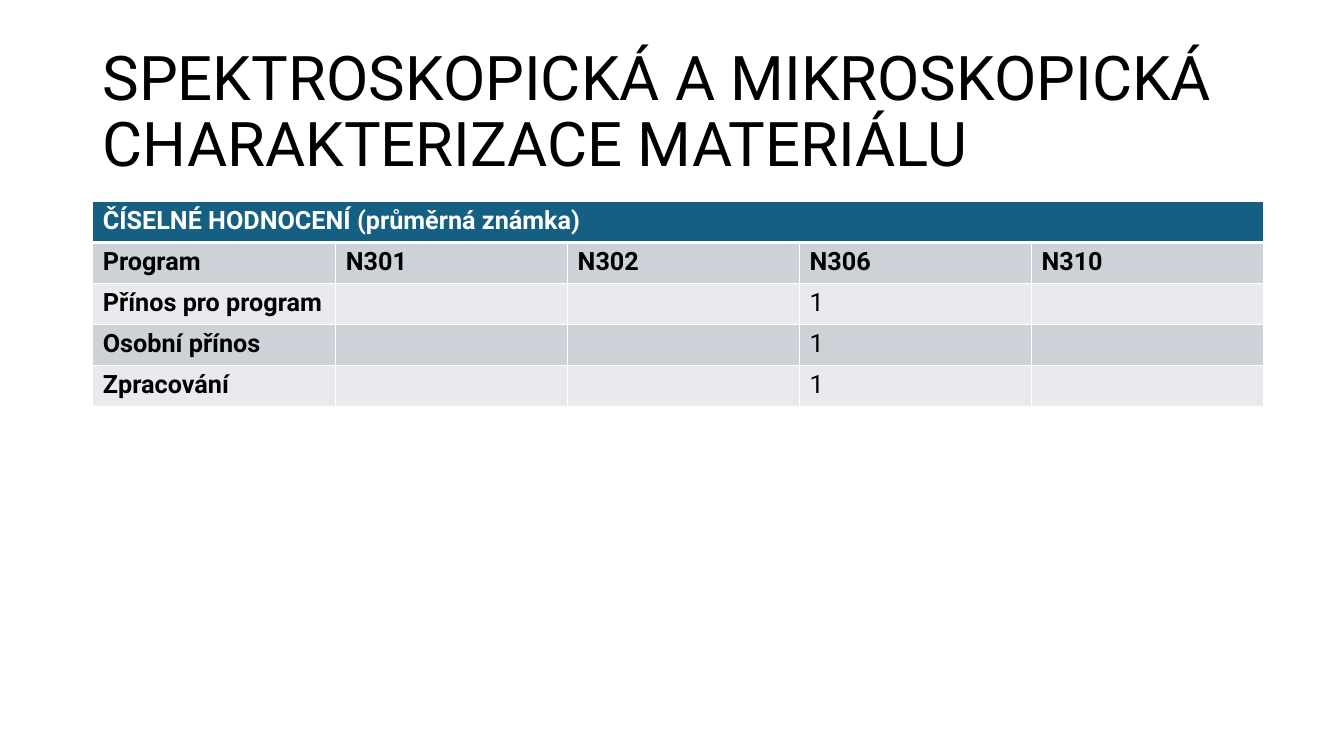
from lxml.etree import SubElement
from pptx import Presentation
from pptx.dml.color import RGBColor
from pptx.enum.text import MSO_ANCHOR
from pptx.oxml.ns import qn
from pptx.util import Inches, Pt

FONT = "Roboto"
BLACK, WHITE, HEADER_BLUE = "000000", "FFFFFF", "156082"
BANDS = ["CCD2D8", "E8EAED"]

TITLE = "SPEKTROSKOPICKÁ A MIKROSKOPICKÁ CHARAKTERIZACE MATERIÁLU"
RATINGS = [
    ["ČÍSELNÉ HODNOCENÍ (průměrná známka)", "", "", "", ""],
    ["Program", "N301", "N302", "N306", "N310"],
    ["Přínos pro program", "", "", "1", ""],
    ["Osobní přínos", "", "", "1", ""],
    ["Zpracování", "", "", "1", ""],
]


def color(hex_string):
    return RGBColor.from_string(hex_string)


def write(para, text, size, hex_string, bold=False):
    para.text = text
    para.font.name = FONT
    para.font.size = Pt(size)
    para.font.bold = bold
    para.font.color.rgb = color(hex_string)


def add_borders(cell, hex_string, bottom_width):
    properties = cell._tc.get_or_add_tcPr()
    for side, width in [("L", 1), ("R", 1), ("T", 1), ("B", bottom_width)]:
        line = SubElement(properties, qn(f"a:ln{side}"), w=str(Pt(width)))
        fill = SubElement(line, qn("a:solidFill"))
        SubElement(fill, qn("a:srgbClr"), val=hex_string)


def add_title(page, left, top, width, height):
    box = page.shapes.add_textbox(
        Inches(left), Inches(top), Inches(width), Inches(height))
    frame = box.text_frame
    frame.word_wrap = True
    frame.vertical_anchor = MSO_ANCHOR.MIDDLE
    para = frame.paragraphs[0]
    para.line_spacing = 0.9
    write(para, TITLE, 44, BLACK)


def add_ratings(page, left, top, width, height):
    row_count, column_count = len(RATINGS), len(RATINGS[0])
    table = page.shapes.add_table(
        row_count, column_count,
        Inches(left), Inches(top), Inches(width), Inches(height)).table
    table.first_row = False
    table.horz_banding = False

    # The label column is a little wider than the equal program columns
    label_width = 2.41
    program_width = (width - label_width) / (column_count - 1)
    for index, column in enumerate(table.columns):
        column.width = Inches(program_width if index else label_width)

    for r, row in enumerate(RATINGS):
        is_header = r == 0
        for c, text in enumerate(row):
            cell = table.cell(r, c)
            add_borders(cell, WHITE, 3 if is_header else 1)
            cell.fill.solid()
            cell.fill.fore_color.rgb = color(
                HEADER_BLUE if is_header else BANDS[(r - 1) % 2])
            write(cell.text_frame.paragraphs[0], text, 18,
                  WHITE if is_header else BLACK, bold=r < 2 or c == 0)

    # Heading across all columns
    table.cell(0, 0).merge(table.cell(0, column_count - 1))


def main():
    deck = Presentation()
    deck.slide_width, deck.slide_height = Inches(13.33), Inches(7.5)
    page = deck.slides.add_slide(deck.slide_layouts[6])
    add_title(page, 0.92, 0.4, 11.5, 1.45)
    add_ratings(page, 0.92, 2, 11.61, 2.03)
    deck.save("out.pptx")


if __name__ == "__main__":
    main()
